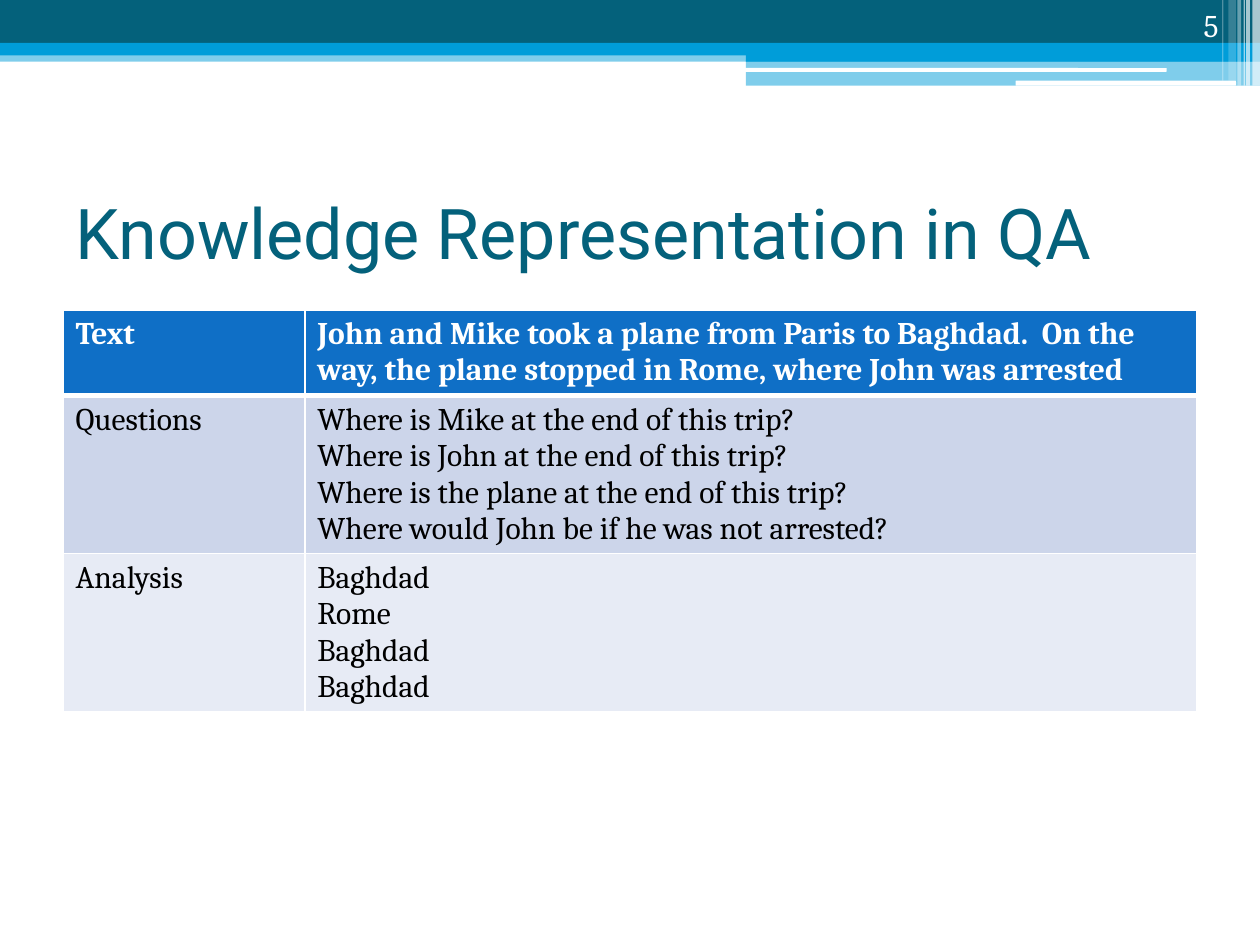
from lxml import etree
from pptx import Presentation
from pptx.dml.color import RGBColor
from pptx.enum import shapes, text
from pptx.oxml import ns
from pptx.util import Inches, Pt

DARK, BLUE, WHITE, BLACK = "04617B", "009DD9", "FFFFFF", "000000"

# left, top, width, height, colour, opacity in percent
BANDS = [
    (0, 0.4, 10, 0.09, BLUE, 50),
    (0, 0, 10, 0.34, DARK, 100),
    (0, 0.34, 10, 0.1, BLUE, 100),
    (5.92, 0.39, 4.08, 0.1, BLUE, 100),
    (5.92, 0.48, 4.08, 0.2, BLUE, 50),
]
LINES = [(5.91, 0.54, 3.35, 0.03), (8.06, 0.64, 1.75, 0.04)]
# left, width, height, opacity in percent
STRIPES = [
    (9.94, 0.06, 0.68, 65),
    (9.89, 0.03, 0.68, 65),
    (9.87, 0.01, 0.68, 60),
    (9.82, 0.03, 0.68, 40),
    (9.75, 0.06, 0.64, 20),
    (9.7, 0.01, 0.64, 30),
]
# label, lines, fill
ROWS = [
    ("Text", ["John and Mike took a plane from Paris to Baghdad.  "
              "On the way, the plane stopped in Rome, where John was arrested"],
     "0F6FC6"),
    ("Questions", ["Where is Mike at the end of this trip?",
                   "Where is John at the end of this trip?",
                   "Where is the plane at the end of this trip?",
                   "Where would John be if he was not arrested?"], "CCD5EA"),
    ("Analysis", ["Baghdad", "Rome", "Baghdad", "Baghdad"], "E7EBF5"),
]


def paint(fill, color, alpha=100):
    fill.solid()
    fill.fore_color.rgb = RGBColor.from_string(color)
    if alpha < 100:
        tint = fill._xPr.find(".//" + ns.qn("a:srgbClr"))
        etree.SubElement(tint, ns.qn("a:alpha"), val=str(alpha * 1000))


def style(frame, face, size, color, bold=False, align=text.PP_ALIGN.LEFT):
    for para in frame.paragraphs:
        para.alignment = align
        for run in para.runs:
            font = run.font
            font.name, font.size, font.bold = face, Pt(size), bold
            font.color.rgb = RGBColor.from_string(color)


def block(slide, box, color, alpha=100, kind=shapes.MSO_SHAPE.RECTANGLE):
    shape = slide.shapes.add_shape(kind, *map(Inches, box))
    shape.shadow.inherit = False
    shape.line.fill.background()
    paint(shape.fill, color, alpha)


def edge(cell, base):
    """White cell borders, with a bottom one of the given width."""
    props = cell._tc.get_or_add_tcPr()
    for spot, (side, width) in enumerate(
            [("lnL", 1), ("lnR", 1), ("lnT", 1), ("lnB", base)]):
        line = etree.Element(ns.qn("a:" + side), w=str(Pt(width)))
        fill = etree.SubElement(line, ns.qn("a:solidFill"))
        etree.SubElement(fill, ns.qn("a:srgbClr"), val=WHITE)
        props.insert(spot, line)


def banner(slide):
    for *box, color, alpha in BANDS:
        block(slide, box, color, alpha)
    for box in LINES:
        block(slide, box, WHITE, kind=shapes.MSO_SHAPE.ROUNDED_RECTANGLE)
    for left, width, height, alpha in STRIPES:
        block(slide, (left, 0, width, height), WHITE, alpha)


def heading(slide, box, words):
    title = slide.shapes.title
    title.left, title.top, title.width, title.height = map(Inches, box)
    frame = title.text_frame
    frame.text = words
    frame.vertical_anchor = text.MSO_ANCHOR.MIDDLE
    style(frame, "Roboto", 40, DARK)


def grid(slide, box):
    table = slide.shapes.add_table(len(ROWS), 2, *map(Inches, box)).table
    for col, width in zip(table.columns, (1.92, 7.08)):
        col.width = Inches(width)
    for row, height in zip(table.rows, (0.68, 1.25, 1.25)):
        row.height = Inches(height)
    for num, (label, lines, color) in enumerate(ROWS):
        head = num == 0
        for cell, words in zip(table.rows[num].cells,
                               (label, "\n".join(lines))):
            cell.text_frame.text = words
            style(cell.text_frame, "Cambria", 18,
                  WHITE if head else BLACK, head)
            paint(cell.fill, color)
            edge(cell, 3 if head else 1)


def number(slide, box, words):
    frame = slide.shapes.add_textbox(*map(Inches, box)).text_frame
    frame.word_wrap = True
    frame.text = words
    frame.vertical_anchor = text.MSO_ANCHOR.BOTTOM
    style(frame, "Cambria", 18, WHITE, align=text.PP_ALIGN.RIGHT)


def main():
    deck = Presentation()
    deck.slide_width, deck.slide_height = Inches(10), Inches(7.5)
    slide = deck.slides.add_slide(deck.slide_layouts[5])
    banner(slide)
    heading(slide, (0.5, 1.25, 9, 1.17), "Knowledge Representation in QA")
    grid(slide, (0.5, 2.46, 9, 3.18))
    number(slide, (8.94, 0, 0.83, 0.4), "5")
    deck.save("out.pptx")


if __name__ == "__main__":
    main()
